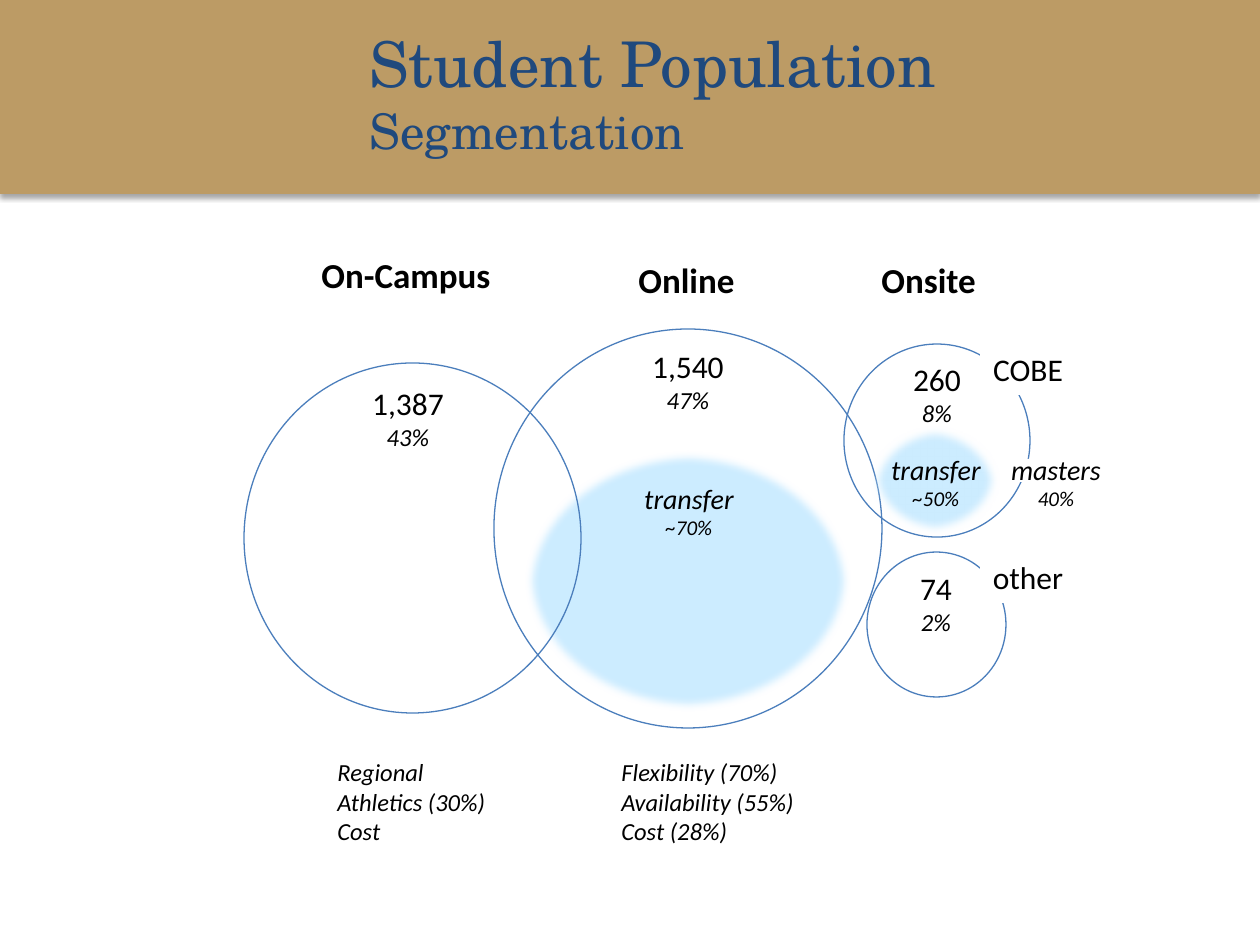
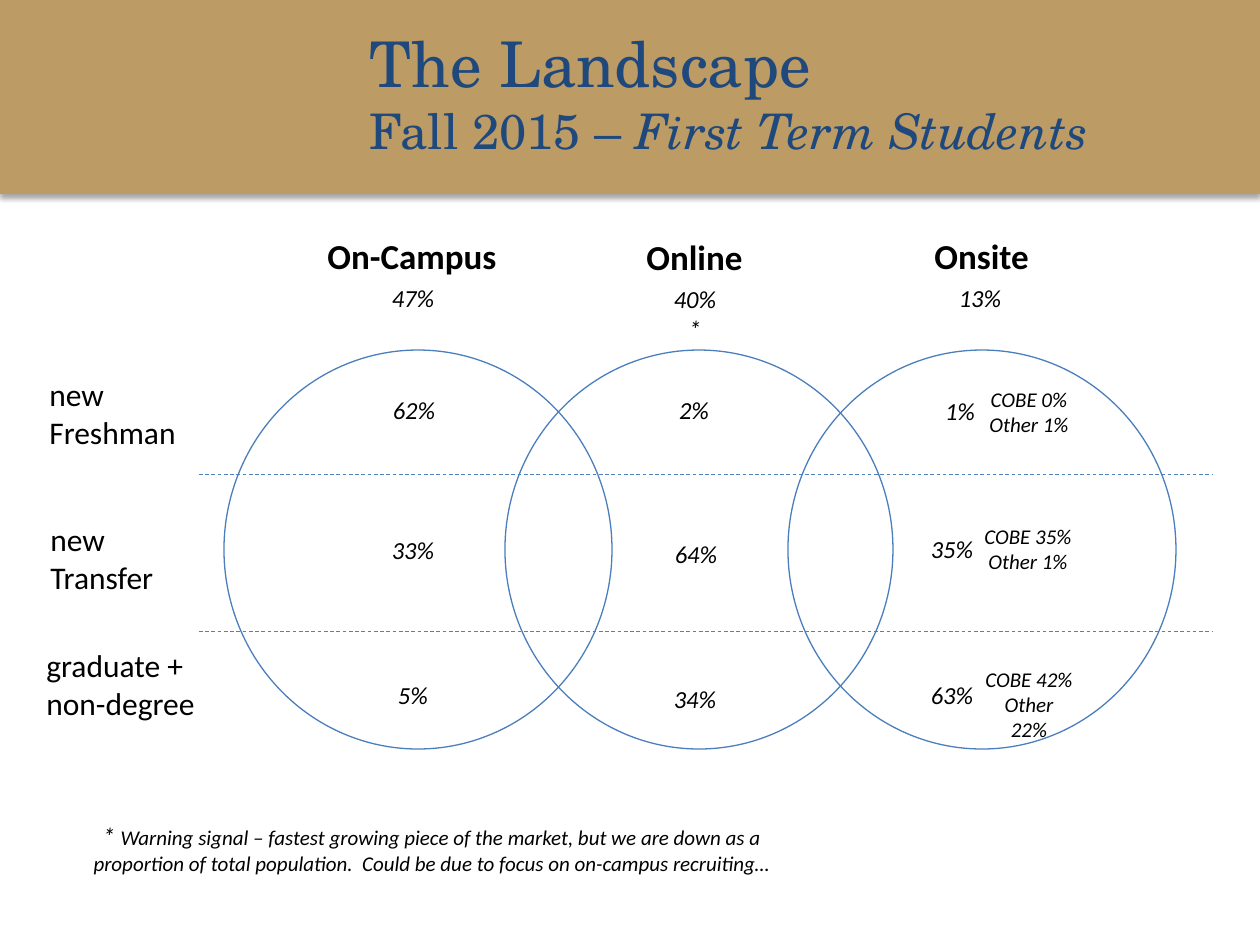
from lxml import etree
from pptx import Presentation, util as u
from pptx.dml.color import RGBColor
from pptx.enum import dml, shapes, text
from pptx.oxml import ns

PX = 914400 / 126
GOLD = RGBColor(0xBC, 0x9B, 0x65)
NAVY = RGBColor(0x1F, 0x49, 0x7D)
SKY = RGBColor(0xCC, 0xEC, 0xFF)
OUTLINE = RGBColor(0x4B, 0x7E, 0xBC)
DIVIDER = RGBColor(0x4F, 0x81, 0xBD)
BLACK = RGBColor(0, 0, 0)
WHITE = RGBColor(0xFF, 0xFF, 0xFF)
LEFT, CENTER = text.PP_ALIGN.LEFT, text.PP_ALIGN.CENTER
OVAL, RECTANGLE = shapes.MSO_SHAPE.OVAL, shapes.MSO_SHAPE.RECTANGLE


def add_text(page, place, paragraphs, box=None, face="Calibri", color=BLACK,
             align=CENTER, bold=False, fill=None, wrap=False):
    if box is None:
        left, top, width = place
        height = 12.6 + 2.13 * sum(spans[-1][1] for spans in paragraphs)
        box = page.shapes.add_textbox(*[round(n * PX) for n in (left, top, width, height)])
        box.text_frame.auto_size = text.MSO_AUTO_SIZE.SHAPE_TO_FIT_TEXT
        box.text_frame.word_wrap = wrap
    if fill is not None:
        box.fill.solid()
        box.fill.fore_color.rgb = fill
    for index, spans in enumerate(paragraphs):
        frame = box.text_frame
        para = frame.add_paragraph() if index else frame.paragraphs[0]
        para.alignment = align
        for words, size, italic in spans:
            span = para.add_run()
            span.text = words
            span.font.name = face
            span.font.size = u.Pt(size)
            span.font.bold = bold
            span.font.italic = italic
            span.font.color.rgb = color


def add_figure(page, kind, place, fill=None, line=None, soft=False):
    figure = page.shapes.add_shape(kind, *[round(n * PX) for n in place])
    figure.shadow.inherit = False
    if fill is None:
        figure.fill.background()
    else:
        figure.fill.solid()
        figure.fill.fore_color.rgb = fill
    if line is None:
        figure.line.fill.background()
    else:
        figure.line.color.rgb = line
        figure.line.width = u.Pt(0.75)
    if soft:
        effects = figure.element.spPr.find(ns.qn("a:effectLst"))
        etree.SubElement(effects, ns.qn("a:softEdge"), rad="63500")
    return figure


deck = Presentation()
deck.slide_width, deck.slide_height = round(1260 * PX), round(945 * PX)
layout = deck.slide_layouts.get_by_name("Title Only")
segmentation, landscape = [deck.slides.add_slide(layout) for _ in range(2)]

band = add_figure(segmentation, RECTANGLE, (0, -1, 1260, 195), GOLD)
effects = band.element.spPr.find(ns.qn("a:effectLst"))
shadow = etree.SubElement(effects, ns.qn("a:outerShdw"), blurRad="40000", dist="23000",
                          dir="5400000", rotWithShape="0")
shade = etree.SubElement(shadow, ns.qn("a:srgbClr"), val="000000")
etree.SubElement(shade, ns.qn("a:alpha"), val="35000")
layout.placeholders[0].element.addprevious(band.element)

titles = [
    (segmentation, "Student Population", [("Segmentation", 28, False)]),
    (landscape, "The Landscape",
     [("Fall 2015 – ", 28, False), ("First Term Students", 28, True)]),
]
for page, heading, subtitle in titles:
    title = page.shapes.title
    title.left, title.top, title.width, title.height = [
        round(n * PX) for n in (357, 20, 872, 144)]
    title.text_frame.auto_size = text.MSO_AUTO_SIZE.NONE
    title.text_frame.vertical_anchor = text.MSO_ANCHOR.MIDDLE
    add_text(page, None, [[(heading, 36, False)], subtitle], box=title,
             face="TeX Gyre Schola", color=NAVY, align=LEFT)

headings = [
    (segmentation, 309, 247, 197, "On-Campus"),
    (segmentation, 626, 252, 122, "Online"),
    (segmentation, 869, 252, 121, "Onsite"),
    (landscape, 315, 228, 197, "On-Campus"),
    (landscape, 634, 229, 122, "Online"),
    (landscape, 922, 228, 121, "Onsite"),
]
for page, left, top, width, name in headings:
    add_text(page, (left, top, width), [[(name, 20, False)]], align=LEFT, bold=True)

add_figure(segmentation, OVAL, (525, 451, 327, 261), SKY, soft=True)
for circle in [(244, 363, 337, 350), (494, 329, 388, 399),
               (844, 344, 186, 193), (867, 552, 139, 145)]:
    add_figure(segmentation, OVAL, circle, line=OUTLINE)
add_figure(segmentation, OVAL, (869, 426, 131, 110), SKY, soft=True)
add_figure(segmentation, RECTANGLE, (1000, 459, 112, 23), WHITE)

for left, top, width, count, share in [
        (359, 378, 98, "1,387", "43%"), (639, 341, 98, "1,540", "47%"),
        (900, 354, 74, "260", "8%"), (907, 563, 58, "74", "2%")]:
    add_text(segmentation, (left, top, width), [[(count, 18, False)], [(share, 14, True)]])

for left, top, group, share in [
        (631, 475, "transfer", "~70%"), (878, 446, "transfer", "~50%"),
        (998, 446, "masters", "40%")]:
    add_text(segmentation, (left, top, 116), [[(group, 16, True)], [(share, 12, True)]])

for top, site in [(344, "COBE"), (552, "other")]:
    add_text(segmentation, (980, top, 96), [[(site, 18, False)]], fill=WHITE)

for left, width, reasons in [
        (325, 175, ["Regional", "Athletics (30%)", "Cost"]),
        (609, 200, ["Flexibility (70%)", "Availability (55%)", "Cost (28%)"])]:
    add_text(segmentation, (left, 751, width),
             [[(reason, 14, True)] for reason in reasons], align=LEFT)

for top in (474, 631):
    divider = landscape.shapes.add_connector(
        shapes.MSO_CONNECTOR.STRAIGHT, *[round(n * PX) for n in (199, top, 1212, top)])
    divider.line.color.rgb = DIVIDER
    divider.line.width = u.Pt(0.5)
    divider.line.dash_style = dml.MSO_LINE.DASH
    etree.SubElement(divider.element.spPr, ns.qn("a:effectLst"))

for left in (788, 505, 224):
    add_figure(landscape, OVAL, (left, 350, 388, 399), line=OUTLINE)

for left, top, width, lines in [
        (37, 369, 154, ["new", "Freshman"]), (38, 514, 129, ["new", "Transfer"]),
        (34, 640, 175, ["graduate +", "non-degree"])]:
    add_text(landscape, (left, top, width), [[(line, 18, False)] for line in lines], align=LEFT)

shares = [
    (413, 277, "47%"), (695, 278, "40%*"), (980, 277, "13%"),
    (414, 389, "62%"), (694, 389, "2%"), (960, 390, "1%"),
    (413, 529, "33%"), (696, 533, "64%"), (952, 528, "35%"),
    (413, 674, "5%"), (695, 678, "34%"), (952, 674, "63%"),
]
for center, top, share in shares:
    add_text(landscape, (center - 34, top, 68), [[(share, 14, True)]])

for center, top, cobe, other in [
        (1029, 380, "COBE 0%", "Other 1%"), (1028, 517, "COBE 35%", "Other 1%"),
        (1029, 660, "COBE 42%", "Other 22%")]:
    add_text(landscape, (center - 57, top, 114), [[(cobe, 12, True)], [(other, 12, True)]])

warning = ("Warning signal – fastest growing piece of the market, but we are down as a "
           "proportion of total population.  Could be due to focus on on-campus recruiting…")
add_text(landscape, (63, 815, 738), [[("* ", 14, True), (warning, 12, True)]], wrap=True)

deck.save("out.pptx")
